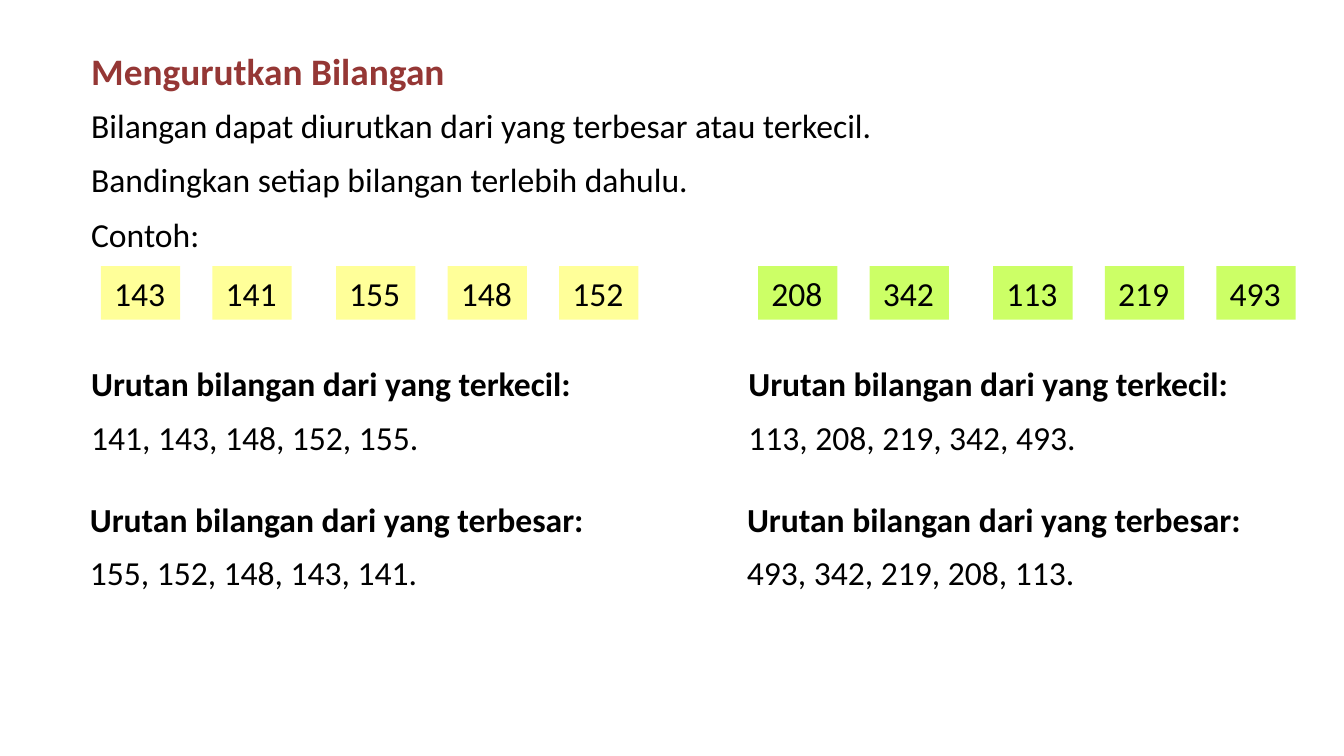
from pptx import Presentation
from pptx.dml.color import RGBColor
from pptx.enum.shapes import MSO_SHAPE
from pptx.enum.text import MSO_ANCHOR, MSO_AUTO_SIZE, PP_ALIGN
from pptx.util import Inches, Pt

# Grid, in inches
PAGE_WIDTH = 10
PAGE_HEIGHT = PAGE_WIDTH * 9 / 16
LEFT = 0.58
COLUMN_STEP = 4.89
LINE_HEIGHT = 0.4
TILE_TOP = 1.98
TILE_WIDTH = 0.59
TILE_INDENT = 0.17
TILE_STEP = 0.83
GROUP_GAP = 0.09  # extra space after the second tile

EXAMPLES = [
    ([143, 141, 155, 148, 152], "FFFF99"),
    ([208, 342, 113, 219, 493], "CCFF66"),
]


def color(hex_value):
    return RGBColor.from_string(hex_value)


def write(shape, text, size=18, hex_value="000000", bold=False):
    frame = shape.text_frame
    frame.text = text
    frame.word_wrap = False
    frame.auto_size = MSO_AUTO_SIZE.SHAPE_TO_FIT_TEXT
    frame.vertical_anchor = MSO_ANCHOR.TOP
    para = frame.paragraphs[0]
    para.alignment = PP_ALIGN.LEFT
    font = para.runs[0].font
    font.name = "Calibri"
    font.size = Pt(size)
    font.bold = bold
    font.color.rgb = color(hex_value)


def add_line(page, left, top, width, text, height=LINE_HEIGHT, **style):
    box = page.shapes.add_textbox(Inches(left), Inches(top), Inches(width), Inches(height))
    write(box, text, **style)


def add_tile(page, left, number, fill):
    tile = page.shapes.add_shape(
        MSO_SHAPE.RECTANGLE, Inches(left), Inches(TILE_TOP),
        Inches(TILE_WIDTH), Inches(LINE_HEIGHT))
    tile.shadow.inherit = False
    tile.fill.solid()
    tile.fill.fore_color.rgb = color(fill)
    tile.line.fill.background()
    write(tile, str(number))


def add_ordering(page, left, top, width, heading, numbers):
    add_line(page, left, top, width, heading, bold=True)
    listing = ", ".join(str(number) for number in numbers) + "."
    add_line(page, left, top + LINE_HEIGHT, 2.67, listing)


def add_example(page, left, numbers, fill):
    # Unsorted number tiles
    for index, number in enumerate(numbers):
        gap = GROUP_GAP if index >= 2 else 0
        add_tile(page, left + TILE_INDENT + index * TILE_STEP + gap, number, fill)
    # Both orderings of the same numbers
    add_ordering(page, left, 2.65, 3.8,
                 "Urutan bilangan dari yang terkecil:", sorted(numbers))
    add_ordering(page, left - 0.01, 3.66, 3.91,
                 "Urutan bilangan dari yang terbesar:", sorted(numbers, reverse=True))


def main():
    deck = Presentation()
    deck.slide_width, deck.slide_height = Inches(PAGE_WIDTH), Inches(PAGE_HEIGHT)
    page = deck.slides.add_slide(deck.slide_layouts[6])

    # Title and explanation
    add_line(page, LEFT, 0.31, 2.86, "Mengurutkan Bilangan",
             height=0.44, size=20, hex_value="953735", bold=True)
    add_line(page, LEFT, 0.73, 6.08,
             "Bilangan dapat diurutkan dari yang terbesar atau terkecil.")
    add_line(page, LEFT, 1.13, 4.7, "Bandingkan setiap bilangan terlebih dahulu.")

    # Two worked examples side by side
    for column, (numbers, fill) in enumerate(EXAMPLES):
        add_example(page, LEFT + column * COLUMN_STEP, numbers, fill)

    # Label above the examples
    add_line(page, LEFT, 1.54, 1.03, "Contoh:")

    deck.save("out.pptx")


if __name__ == "__main__":
    main()
